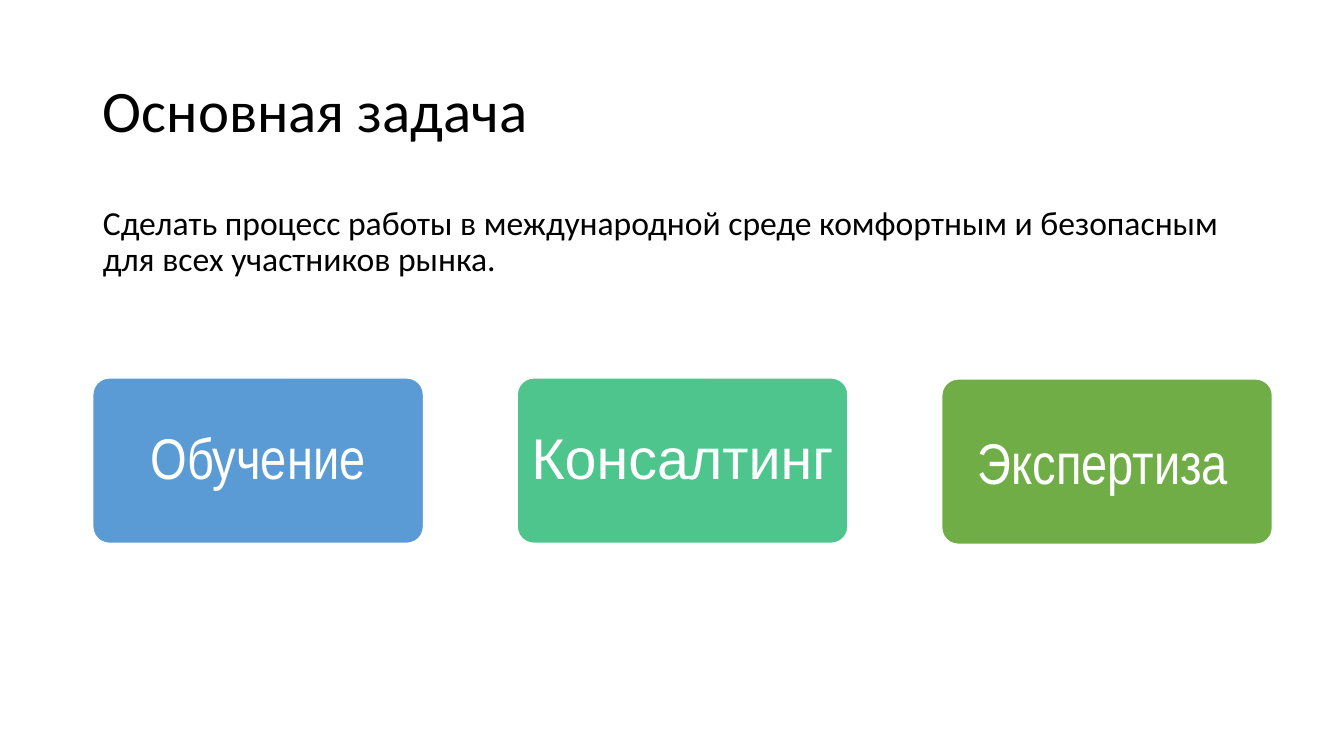
from pptx import Presentation
from pptx.dml.color import RGBColor
from pptx.enum.shapes import MSO_SHAPE as Shape
from pptx.enum.text import MSO_ANCHOR as Anchor, MSO_AUTO_SIZE as AutoSize, PP_ALIGN as Align
from pptx.util import Inches, Pt

BLACK = RGBColor(0, 0, 0)
WHITE = RGBColor(255, 255, 255)
BLUE = RGBColor(0x5B, 0x9B, 0xD5)
MINT = RGBColor(0x4D, 0xC5, 0x8D)
GREEN = RGBColor(0x70, 0xAD, 0x47)

MARGIN, CONTENT_WIDTH = 0.92, 11.5
CARD_WIDTH, CARD_HEIGHT, CARD_STEP = 3.28, 1.64, 4.21
EVEN_INSETS = (0.09, 0.06, 0.09, 0.06)
SHIFTED_INSETS = (0.05, 0.14, 0.13, 0.05)
SERVICES = [
    ("Обучение", BLUE, "Arial Narrow", 3.75, EVEN_INSETS),
    ("Консалтинг", MINT, "Arial", 3.75, EVEN_INSETS),
    ("Экспертиза", GREEN, "Arial Narrow", 3.76, SHIFTED_INSETS),
]


def write(frame, text, font, size, color, align, anchor):
    """Put one formatted paragraph into a text frame."""
    frame.text = text
    frame.auto_size = AutoSize.NONE
    frame.vertical_anchor = anchor
    paragraph = frame.paragraphs[0]
    paragraph.alignment = align
    paragraph.line_spacing = 0.9
    run_font = paragraph.runs[0].font
    run_font.name, run_font.size = font, Pt(size)
    run_font.color.rgb = color
    return paragraph


def place(holder, top, height):
    """Stretch a placeholder across the content width."""
    holder.left, holder.top = Inches(MARGIN), Inches(top)
    holder.width, holder.height = Inches(CONTENT_WIDTH), Inches(height)


def add_heading(slide, text):
    """Fill the title placeholder."""
    title = slide.shapes.title
    place(title, 0.4, 1.45)
    write(title.text_frame, text, "Calibri", 42, BLACK, Align.LEFT, Anchor.MIDDLE)


def add_statement(slide, text):
    """Fill the body placeholder with a paragraph without a bullet."""
    body = slide.placeholders[1]
    place(body, 2, 4.76)
    paragraph = write(body.text_frame, text, "Calibri", 24, BLACK, Align.LEFT, Anchor.TOP)
    paragraph.space_before = Pt(10)
    properties = paragraph._p.get_or_add_pPr()
    properties.set("marL", "0")
    properties.set("indent", "0")
    bullet_off = properties.makeelement(
        "{http://schemas.openxmlformats.org/drawingml/2006/main}buNone", {})
    properties.append(bullet_off)


def add_card(slide, column, name, color, font, top, insets):
    """Draw one service as a rounded card in its column."""
    card = slide.shapes.add_shape(
        Shape.ROUNDED_RECTANGLE, Inches(MARGIN + column * CARD_STEP), Inches(top),
        Inches(CARD_WIDTH), Inches(CARD_HEIGHT))
    card.adjustments[0] = 0.1
    card.shadow.inherit = False
    card.fill.solid()
    card.fill.fore_color.rgb = color
    card.line.color.rgb = WHITE
    card.line.width = Pt(1)
    frame = card.text_frame
    frame.margin_left, frame.margin_top, frame.margin_right, frame.margin_bottom = map(Inches, insets)
    write(frame, name, font, 41, WHITE, Align.CENTER, Anchor.MIDDLE)
    frame.word_wrap = False


def main():
    """Build the slide and save it."""
    deck = Presentation()
    deck.slide_width, deck.slide_height = Inches(13.33), Inches(7.5)
    slide = deck.slides.add_slide(deck.slide_layouts[1])
    add_heading(slide, "Основная задача")
    add_statement(slide, "Сделать процесс работы в международной среде комфортным "
                         "и безопасным для всех участников рынка.")
    for column, service in enumerate(SERVICES):
        add_card(slide, column, *service)
    deck.save("out.pptx")


if __name__ == "__main__":
    main()
